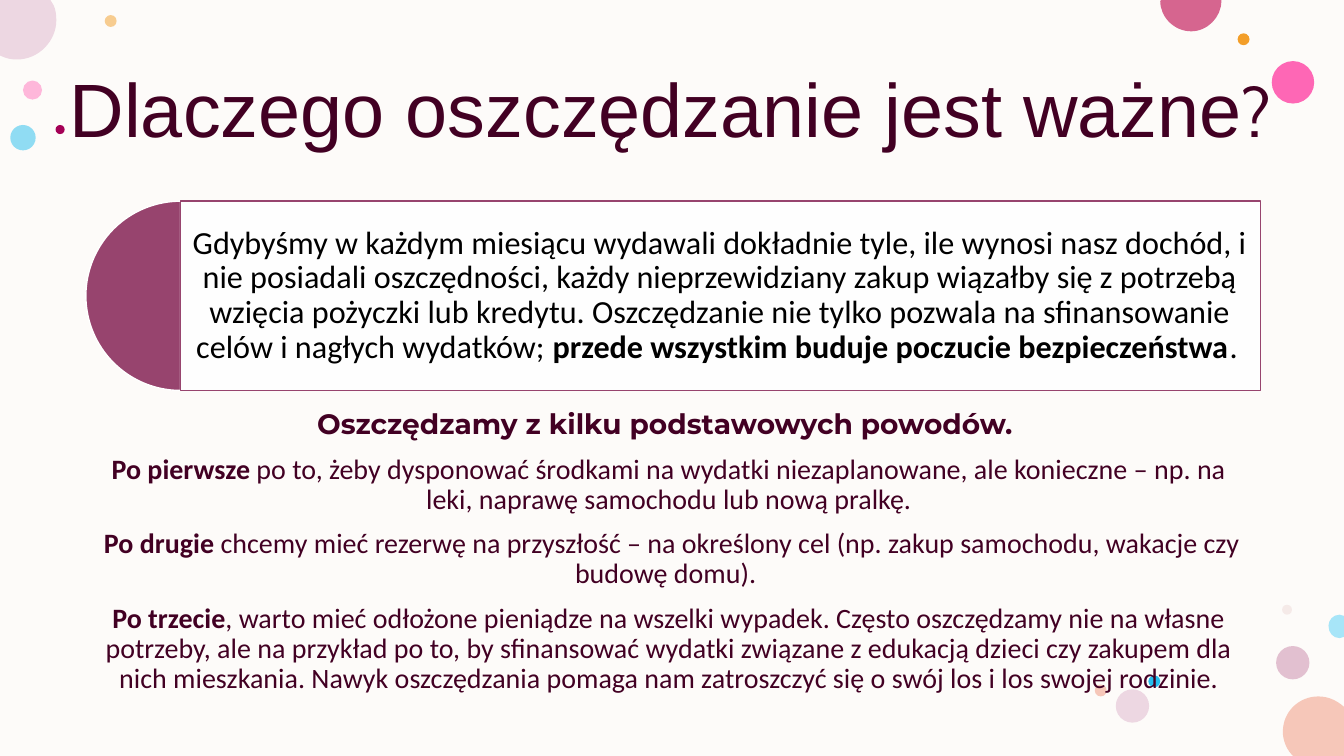
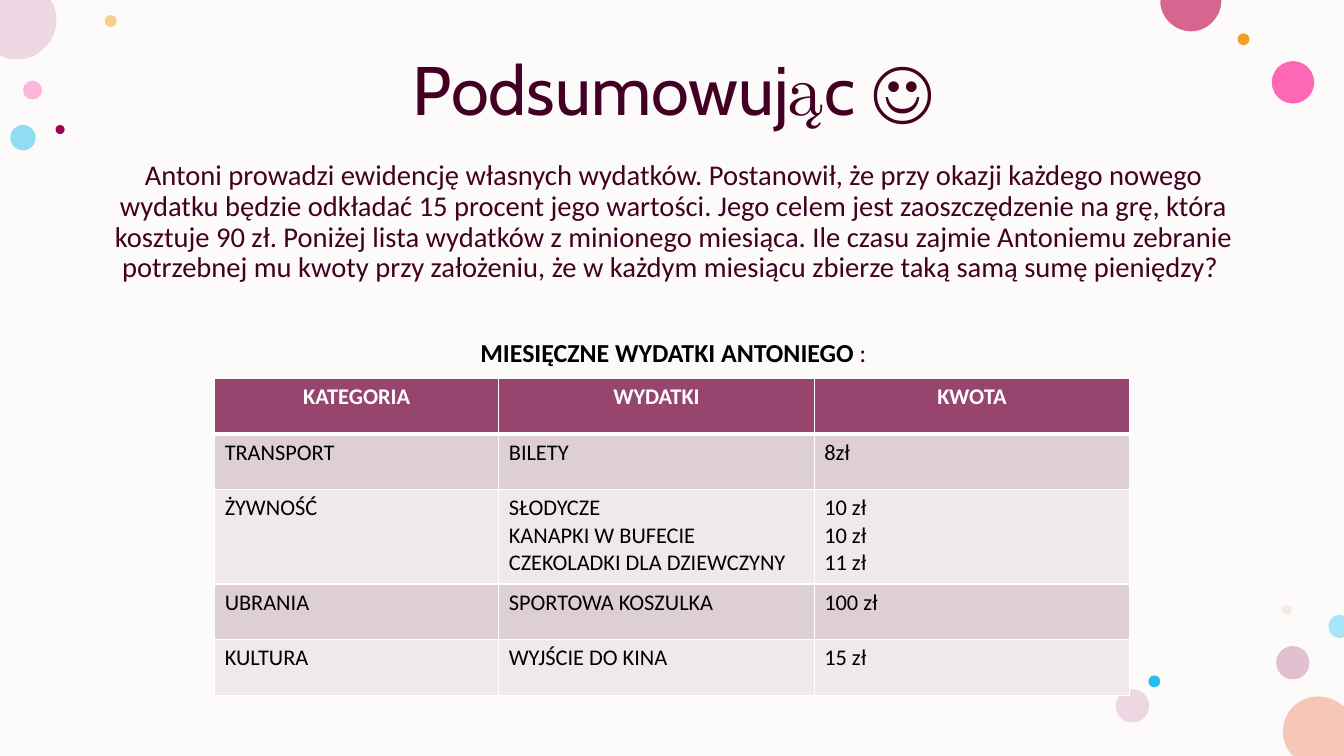
from dataclasses import dataclass

from pptx import Presentation
from pptx.dml.color import RGBColor
from pptx.enum.shapes import MSO_SHAPE as Form
from pptx.enum.text import MSO_ANCHOR as Anchor, MSO_AUTO_SIZE as Fit, PP_ALIGN as Align
from pptx.oxml.ns import qn
from pptx.util import Cm, Pt
from lxml.etree import Element, SubElement as Sub

WIDE, HIGH = 33.87, 19.05


@dataclass(frozen=True)
class Theme:
    paper: str = "FDFBF9"
    ink: str = "420023"
    plum: str = "97446E"
    white: str = "FFFFFF"
    black: str = "000000"
    bands: tuple = ("DDCFD5", "EFE9EB")
    plain: str = "Calibri"
    fancy: str = "Cabin"
    strong: str = "Montserrat"
    block: str = "Arial"
    huge: float = 54
    mark: float = 48.6
    large: float = 49
    quote: float = 23
    body: float = 20
    story: float = 20.4
    label: float = 18.5
    cell: float = 16


# left, top, diameter, colour, opacity in percent
DOTS = [
    (0.58, 2.03, 0.48, "FF75BD", 50),
    (2.64, 0.38, 0.3, "F39E29", 50),
    (32.16, 16.28, 0.84, "C987A8", 50),
    (0.26, 3.15, 0.64, "24BEEE", 50),
    (32.05, 1.54, 1.07, "FF2F9C", 72),
    (31.19, 0.84, 0.3, "F39E29", 100),
    (32.31, 15.24, 0.25, "E3BEBE", 28),
    (28.94, 17.02, 0.3, "24BEEE", 100),
    (28.12, 17.37, 0.84, "EDD7E2", 100),
    (27.59, 17.25, 0.3, "F6C7B9", 100),
    (1.4, 3.15, 0.23, "A40056", 100),
]

# colour, start, then steps: one point is a line, three points are a curve
CUTS = [
    ("F6C7B9", (33.22, 17.55), [
        [(33.48, 17.55), (33.68, 17.65), (33.87, 17.81)],
        [(33.87, 19.05)], [(32.59, 19.05)], [(32.54, 19)],
        [(32.41, 18.85), (32.33, 18.64), (32.33, 18.44)],
        [(32.33, 17.93), (32.74, 17.55), (33.22, 17.55)]]),
    ("EDD7E2", (0, 0), [
        [(1.27, 0)], [(1.35, 0.13)],
        [(1.4, 0.23), (1.42, 0.36), (1.42, 0.51)],
        [(1.42, 1.04), (0.97, 1.5), (0.43, 1.5)],
        [(0.28, 1.5), (0.15, 1.47), (0.05, 1.42)], [(0, 1.4)]]),
    ("D6658F", (29.26, 0), [
        [(30.78, 0)], [(30.78, 0.03)],
        [(30.78, 0.43), (30.43, 0.79), (30.02, 0.79)],
        [(29.59, 0.79), (29.24, 0.43), (29.24, 0.03)]]),
    ("A7E5F8", (33.76, 15.49), [
        [(33.87, 15.52)], [(33.87, 16.05)], [(33.76, 16.08)],
        [(33.6, 16.08), (33.48, 15.95), (33.48, 15.77)],
        [(33.48, 15.62), (33.6, 15.49), (33.76, 15.49)]]),
]


def tint(fill, color, alpha=100):
    fill.solid()
    fill.fore_color.rgb = RGBColor.from_string(color)
    if alpha < 100:
        tone = fill._xPr.find(qn("a:solidFill"))[0]
        Sub(tone, qn("a:alpha"), val=str(alpha * 1000))


def place(shape, box):
    shape.left, shape.top, shape.width, shape.height = map(Cm, box)


def write(par, text, font=Theme.plain, size=Theme.body, color=Theme.ink, bold=False):
    """Add text to a paragraph; parts between asterisks switch the weight."""
    for turn, part in enumerate(text.split("*")):
        if part:
            run = par.add_run()
            run.text = part
            face = run.font
            face.name, face.size = font, Pt(size)
            face.bold = bold != bool(turn % 2)
            face.color.rgb = RGBColor.from_string(color)


def start(frame, align=Align.CENTER, pitch=0.9, before=0):
    """Return a fresh paragraph without bullet or indent."""
    par = frame.paragraphs[0]
    if par.runs:
        par = frame.add_paragraph()
    par.alignment, par.line_spacing = align, pitch
    par.space_before = Pt(before)
    props = par._p.get_or_add_pPr()
    props.set("marL", "0")
    props.set("indent", "0")
    Sub(props, qn("a:buNone"))
    return par


class Deck:
    def __init__(self, theme):
        self.theme = theme
        self.file = Presentation()
        self.file.slide_width, self.file.slide_height = Cm(WIDE), Cm(HIGH)
        self.base = self.file.slide_layouts[1]
        self.slide = self.host = None
        for holder in list(self.base.placeholders)[2:]:
            holder._element.getparent().remove(holder._element)

    def page(self):
        self.slide = self.file.slides.add_slide(self.base)
        self.host = self.slide.shapes

    def dress(self):
        """Draw paper and dots, then move them to the layout, at the back."""
        paper = self.shape(Form.RECTANGLE, (0, 0, WIDE, HIGH), self.theme.paper)
        group = self.slide.shapes.add_group_shape()
        self.host = group.shapes
        for left, top, size, color, alpha in DOTS:
            self.shape(Form.OVAL, (left, top, size, size), color, alpha)
        for cut in CUTS:
            self.cut(*cut)
        self.host = self.slide.shapes
        for spot, part in enumerate((paper, group), 2):
            self.base.shapes._spTree.insert(spot, part._element)

    def cut(self, color, first, steps):
        """Draw a closed outline of lines and curves."""
        pen = self.host.build_freeform(*map(Cm, first))
        pen.add_line_segments([tuple(map(Cm, spot)) for step in steps for spot in step])
        shape = pen.convert_to_shape()
        lines = list(shape._element.iter(qn("a:lnTo")))
        for step in steps:
            group, lines = lines[:len(step)], lines[len(step):]
            if len(step) == 3:
                curve = Element(qn("a:cubicBezTo"))
                group[0].addprevious(curve)
                for line in group:
                    curve.append(line[0])
                    line.getparent().remove(line)
        self.paint(shape, color)

    def paint(self, shape, color, alpha=100, edge=None):
        shape.shadow.inherit = False
        tint(shape.fill, color, alpha)
        if edge:
            tint(shape.line.fill, edge)
            shape.line.width = Pt(1)
        else:
            shape.line.fill.background()
        return shape

    def shape(self, form, box, color, alpha=100, edge=None):
        item = self.host.add_shape(form, *map(Cm, box))
        return self.paint(item, color, alpha, edge)

    def frame(self, shape, anchor):
        frame = shape.text_frame
        frame.word_wrap, frame.auto_size = True, Fit.NONE
        frame.vertical_anchor = anchor
        return frame

    def title(self, box):
        """Place the title and return its paragraph."""
        head = self.slide.shapes.title
        place(head, box)
        return start(self.frame(head, Anchor.MIDDLE))

    def body(self, box):
        """Place the body and return its text frame."""
        holder = self.slide.placeholders[1]
        place(holder, box)
        return self.frame(holder, Anchor.TOP)

    def panel(self, box, text):
        """Draw a framed quote with a half disc at its left side."""
        look = self.theme
        left, top, _, high = box
        disc = self.shape(Form.PIE, (left - high / 2, top, high, high),
                          look.plum, edge=look.white)
        disc.adjustments[0], disc.adjustments[1] = 54, 162
        card = self.shape(Form.RECTANGLE, box, look.white, 90, look.plum)
        frame = self.frame(card, Anchor.MIDDLE)
        frame.margin_top = frame.margin_bottom = Cm(0.25)
        write(start(frame), text, size=look.quote, color=look.black)

    def table(self, spot, cols, rows, data):
        look = self.theme
        grid = self.slide.shapes.add_table(
            len(rows), len(cols), *map(Cm, (*spot, sum(cols), sum(rows)))).table
        grid.horz_banding = False
        for col, wide in zip(grid.columns, cols):
            col.width = Cm(wide)
        for rank, (row, high, texts) in enumerate(zip(grid.rows, rows, data)):
            row.height = Cm(high)
            head = rank == 0
            fill = look.plum if head else look.bands[(rank - 1) % 2]
            for cell, text in zip(row.cells, texts):
                self.rule(cell, B=3 if head else 1)
                tint(cell.fill, fill)
                for line in text.split("\n"):
                    par = start(cell.text_frame, pitch=1,
                                align=Align.CENTER if head else Align.LEFT)
                    write(par, line, size=look.cell, bold=head,
                          color=look.white if head else look.black)

    def rule(self, cell, **widths):
        """Give a cell white borders, one point wide unless told otherwise."""
        props = cell._tc.get_or_add_tcPr()
        for side in "LRTB":
            line = Sub(props, qn("a:ln" + side), w=str(Pt(widths.get(side, 1))))
            Sub(Sub(line, qn("a:solidFill")), qn("a:srgbClr"), val=self.theme.white)


def reasons(deck):
    look = deck.theme
    head = deck.title((0.84, 1.02, 32.13, 3.68))
    write(head, "Dlaczego oszczędzanie jest ważne", font=look.block, size=look.huge)
    write(head, "?", font=look.fancy, size=look.mark)
    deck.panel((4.55, 5.07, 27.22, 4.77),
               "Gdybyśmy w każdym miesiącu wydawali dokładnie tyle, ile wynosi nasz "
               "dochód, i nie posiadali oszczędności, każdy nieprzewidziany zakup "
               "wiązałby się z potrzebą wzięcia pożyczki lub kredytu. Oszczędzanie nie "
               "tylko pozwala na sfinansowanie celów i nagłych wydatków; "
               "*przede wszystkim buduje poczucie bezpieczeństwa*. ")
    body = deck.body((2.16, 10.22, 29.39, 8.1))
    write(start(body, before=10), "Oszczędzamy z kilku podstawowych powodów. ",
          font=look.strong, bold=True)
    for text in (
        "*Po pierwsze *po to, żeby dysponować środkami na wydatki niezaplanowane, ale "
        "konieczne ‒ np. na leki, naprawę samochodu lub nową pralkę.",
        " *Po drugie *chcemy mieć rezerwę na przyszłość – na określony cel (np. zakup "
        "samochodu, wakacje czy budowę domu). ",
        "*Po trzecie*, warto mieć odłożone pieniądze na wszelki wypadek. Często "
        "oszczędzamy nie na własne potrzeby, ale na przykład po to, by sfinansować "
        "wydatki związane z edukacją dzieci czy zakupem dla nich mieszkania. Nawyk "
        "oszczędzania pomaga nam zatroszczyć się o swój los i los swojej rodzinie.",
    ):
        write(start(body, before=10), text)


def summary(deck):
    look = deck.theme
    write(deck.title((2.16, 0.51, 29.62, 3.68)), "Podsumowując ☺",
          font=look.fancy, size=look.large)
    body = deck.body((2.16, 3.92, 29.62, 5.61))
    write(start(body, before=10),
          "Antoni prowadzi ewidencję własnych wydatków. Postanowił, że przy okazji "
          "każdego nowego wydatku będzie odkładać 15 procent jego wartości. Jego celem "
          "jest zaoszczędzenie na grę, która kosztuje 90 zł. Poniżej lista wydatków z "
          "minionego miesiąca. Ile czasu zajmie Antoniemu zebranie potrzebnej mu kwoty "
          "przy założeniu, że w każdym miesiącu zbierze taką samą sumę pieniędzy? ",
          size=look.story)
    label = start(body, before=40)
    write(label, "MIESIĘCZNE WYDATKI ANTONIEGO ", size=look.label,
          color=look.black, bold=True)
    write(label, ":", size=look.label)
    deck.table((5.41, 9.53), (7.16, 7.95, 7.95), (1.4, 1.4, 2.39, 1.4, 1.4), [
        ("KATEGORIA", "WYDATKI", "KWOTA"),
        ("TRANSPORT", "BILETY", "8zł"),
        ("ŻYWNOŚĆ", "SŁODYCZE\nKANAPKI W BUFECIE\nCZEKOLADKI DLA DZIEWCZYNY",
         "10 zł\n10 zł\n11 zł"),
        ("UBRANIA", "SPORTOWA KOSZULKA", "100 zł"),
        ("KULTURA", "WYJŚCIE DO KINA", "15 zł"),
    ])


def main():
    deck = Deck(Theme())
    deck.page()
    deck.dress()
    reasons(deck)
    deck.page()
    summary(deck)
    deck.file.save("out.pptx")


if __name__ == "__main__":
    main()
